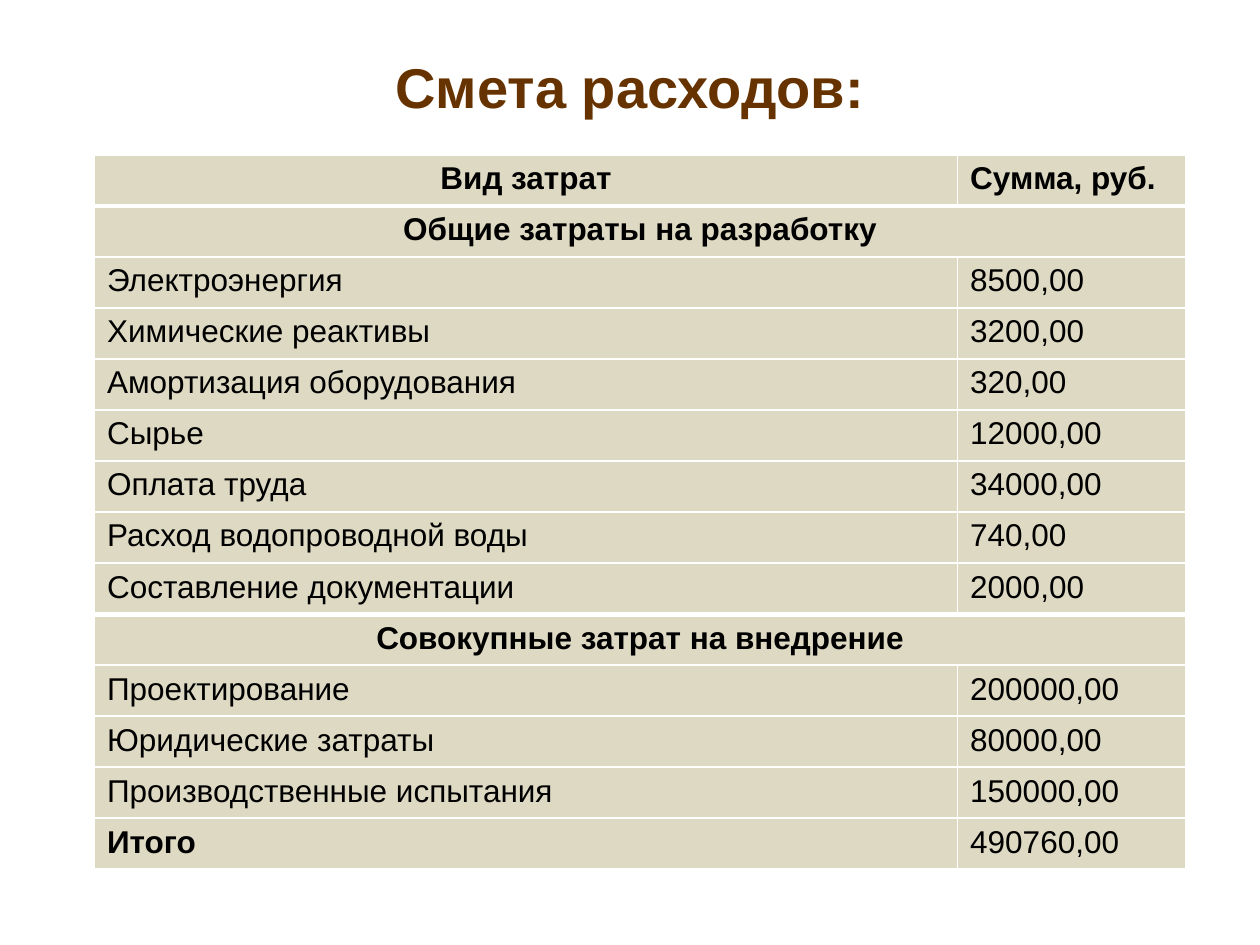
from lxml import etree
from pptx import Presentation
from pptx.dml.color import RGBColor
from pptx.enum.text import MSO_ANCHOR, PP_ALIGN
from pptx.oxml.ns import qn
from pptx.util import Inches, Pt

LEFT, CENTER = PP_ALIGN.LEFT, PP_ALIGN.CENTER
MIDDLE = MSO_ANCHOR.MIDDLE
COLORS = {"title": "663300", "text": "000000", "cell": "DDD9C3", "border": "FFFFFF"}
FONT = "Arial"
COLUMN_WIDTHS = (6.85, 1.81)
ROW_HEIGHT = 0.405
TABLE_LEFT = 0.75


def write_text(frame, text, size=18, bold=False, color="text", align=LEFT):
    para = frame.paragraphs[0]
    para.alignment = align
    span = para.add_run()
    span.text = text
    span.font.name = FONT
    span.font.size = Pt(size)
    span.font.bold = bold
    span.font.color.rgb = RGBColor.from_string(COLORS[color])


def set_borders(cell, top, bottom):
    properties = cell._tc.get_or_add_tcPr()
    for side, width in (("L", 1), ("R", 1), ("T", top), ("B", bottom)):
        line = etree.SubElement(properties, qn(f"a:ln{side}"), w=str(Pt(width)))
        fill = etree.SubElement(line, qn("a:solidFill"))
        etree.SubElement(fill, qn("a:srgbClr"), val=COLORS["border"])


deck = Presentation()
deck.slide_width, deck.slide_height = Inches(10), Inches(7.5)
page = deck.slides.add_slide(deck.slide_layouts[6])

# Title
box = page.shapes.add_textbox(Inches(0.5), Inches(0.36), Inches(9), Inches(0.64))
box.text_frame.word_wrap = True
box.text_frame.vertical_anchor = MIDDLE
write_text(box.text_frame, "Смета расходов:", size=32, bold=True, color="title", align=CENTER)

# Rows with a single entry are section headings across both columns
development_costs = [
    ("Вид затрат", "Сумма, руб."),
    ("Общие затраты на разработку",),
    ("Электроэнергия", "8500,00"),
    ("Химические реактивы", "3200,00"),
    ("Амортизация оборудования", "320,00"),
    ("Сырье", "12000,00"),
    ("Оплата труда", "34000,00"),
    ("Расход водопроводной воды", "740,00"),
]
rollout_costs = [
    ("Составление документации", "2000,00"),
    ("Совокупные затрат на внедрение",),
    ("Проектирование", "200000,00"),
    ("Юридические затраты", "80000,00"),
    ("Производственные испытания", "150000,00"),
    ("Итого", "490760,00"),
]
bold_texts = {"Вид затрат", "Сумма, руб.", "Итого"}

# Two cost tables, one directly below the other
table_top = 1.23
for rows in (development_costs, rollout_costs):
    height = ROW_HEIGHT * len(rows)
    table = page.shapes.add_table(
        len(rows), len(COLUMN_WIDTHS), Inches(TABLE_LEFT), Inches(table_top),
        Inches(sum(COLUMN_WIDTHS)), Inches(height)).table
    for column, width in zip(table.columns, COLUMN_WIDTHS):
        column.width = Inches(width)

    for row_index, entries in enumerate(rows):
        table.rows[row_index].height = Inches(ROW_HEIGHT)
        is_heading = len(entries) == 1

        # A thick rule separates the first row from the rest
        for cell in table.rows[row_index].cells:
            set_borders(cell, top=3 if row_index == 1 else 1, bottom=3 if row_index == 0 else 1)
            cell.fill.solid()
            cell.fill.fore_color.rgb = RGBColor.from_string(COLORS["cell"])
        if is_heading:
            table.cell(row_index, 0).merge(table.cell(row_index, 1))

        for column_index, text in enumerate(entries):
            centered = is_heading or text == "Вид затрат"
            write_text(table.cell(row_index, column_index).text_frame, text,
                       bold=is_heading or text in bold_texts,
                       align=CENTER if centered else LEFT)
    table_top += height

deck.save("out.pptx")
